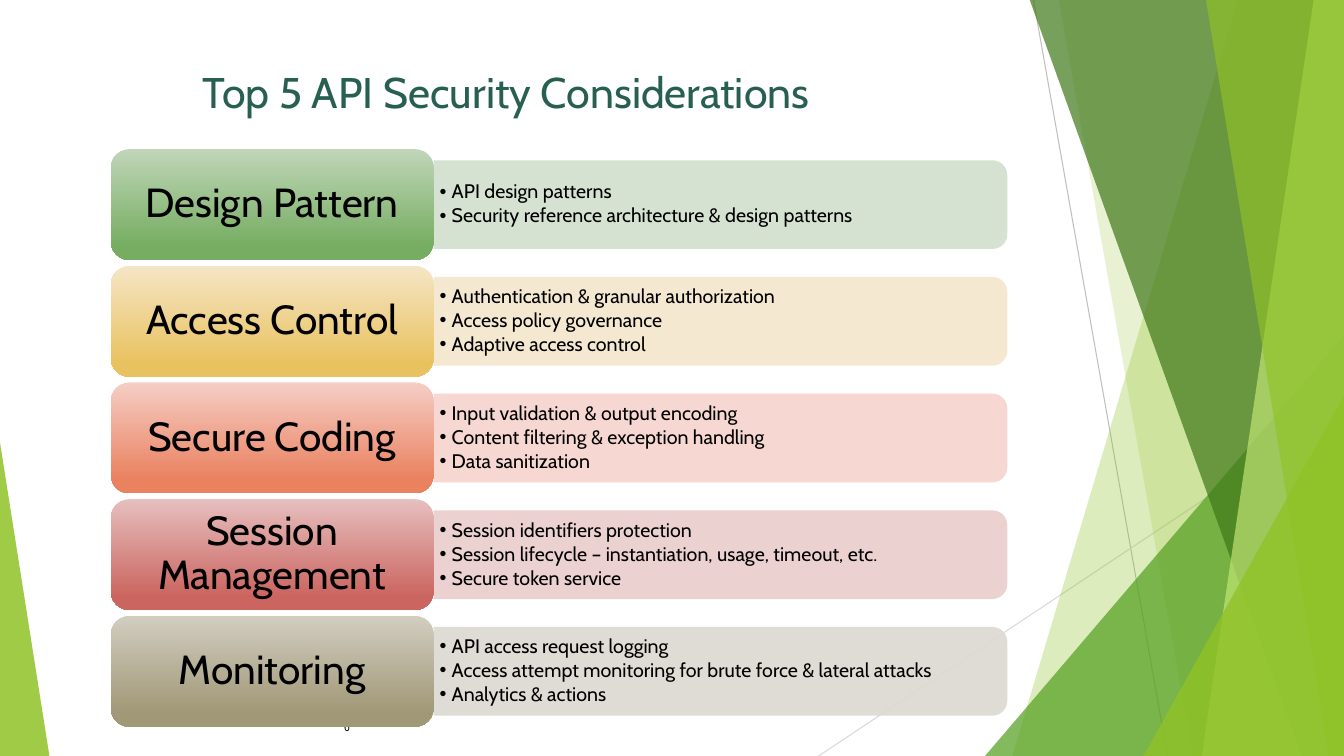
from dataclasses import dataclass

from lxml.etree import SubElement
from pptx import Presentation
from pptx.dml.color import RGBColor
from pptx.enum.shapes import MSO_CONNECTOR as Connector, MSO_SHAPE as Preset
from pptx.enum.text import MSO_ANCHOR as Anchor, MSO_AUTO_SIZE as AutoSize, PP_ALIGN as Align
from pptx.oxml.ns import qn
from pptx.util import Inches, Pt


@dataclass(frozen=True)
class Theme:
    font: str = "Cabin"
    number_font: str = "Arial Narrow"
    text: str = "000000"
    title: str = "275F50"
    lime: str = "90C226"
    green: str = "54A021"
    forest: str = "3F7819"
    pale_lime: str = "C0E474"
    title_size: float = 30.6
    label_size: float = 29
    list_size: float = 14
    number_size: float = 9


@dataclass(frozen=True)
class Ray:
    start: tuple[float, float]
    end: tuple[float, float]
    color: str


@dataclass(frozen=True)
class Band:
    """A strip reaching the right page edge, with a slanted left side."""
    top_left: float
    bottom_left: float
    color: str
    alpha: int


@dataclass(frozen=True)
class Corner:
    left: float
    top: float
    width: float
    apex: float
    color: str
    alpha: int


@dataclass(frozen=True)
class Topic:
    label: str
    points: tuple[str, ...]
    panel: str
    light: str
    dark: str


THEME = Theme()
PAGE_WIDTH, PAGE_HEIGHT = 13.33, 7.5
BAND_TOP = -0.01

LABEL_LEFT, LABEL_WIDTH, LABEL_HEIGHT = 1.1, 3.2, 1.1
PANEL_LEFT, PANEL_WIDTH, PANEL_HEIGHT = LABEL_LEFT + LABEL_WIDTH, 5.69, 0.88
LIST_WIDTH, LIST_HEIGHT = 5.65, 0.79
FIRST_ROW, LAST_ROW = 1.48, 6.11

RAYS = (
    Ray((10.25, 0), (11.58, 7.5), "BFBFBF"),
    Ray((13.33, 4.03), (8.12, 7.5), "D9D9D9"),
)
DECORATION = (
    Band(12.28, 10.04, THEME.lime, 30),
    Band(10.5, 11.83, THEME.lime, 20),
    Corner(9.77, 3.33, 3.56, 1, THEME.green, 72),
    Band(10.21, 12.91, THEME.forest, 70),
    Band(13.03, 11.92, THEME.pale_lime, 70),
    Band(11.96, 13.18, THEME.lime, 65),
    Corner(11.34, 3.93, 1.99, 1, THEME.lime, 80),
    Corner(0, 4.39, 0.49, 0, THEME.lime, 85),
)
TOPICS = (
    Topic("Design Pattern",
          ("API design patterns", "Security reference architecture & design patterns"),
          "D1DFCD", "C0D6B9", "76AD61"),
    Topic("Access Control",
          ("Authentication & granular authorization", "Access policy governance",
           "Adaptive access control"),
          "F5E6CD", "F5E5C5", "E9C260"),
    Topic("Secure Coding",
          ("Input validation & output encoding", "Content filtering & exception handling",
           "Data sanitization"),
          "F6D3CC", "F5CEC5", "EA815F"),
    Topic("Session Management",
          ("Session identifiers protection",
           "Session lifecycle – instantiation, usage, timeout, etc.", "Secure token service"),
          "EACDCD", "E6BFBE", "CB6560"),
    Topic("Monitoring",
          ("API access request logging",
           "Access attempt monitoring for brute force & lateral attacks", "Analytics & actions"),
          "DCD9D1", "D1CDC0", "A19877"),
)


def inches(*lengths: float) -> list[int]:
    return [Inches(length) for length in lengths]


def paint(shape, color: str, alpha: int) -> None:
    """Give a flat, translucent fill without line or shadow."""
    shape.shadow.inherit = False
    shape.line.fill.background()
    shape.fill.solid()
    shape.fill.fore_color.rgb = RGBColor.from_string(color)
    for tint in shape.fill._xPr.find(qn("a:solidFill")):
        SubElement(tint, qn("a:alpha"), val=str(alpha * 1000))


def write(frame, *lines: str, size: float, font: str = THEME.font, color: str = THEME.text,
          align=Align.LEFT, anchor=Anchor.MIDDLE, margins=(0.1, 0.05),
          line_spacing: float = 1, space_after: float = 0, bullet: bool = False) -> None:
    frame.word_wrap = True
    frame.auto_size = AutoSize.NONE
    frame.vertical_anchor = anchor
    frame.margin_left = frame.margin_right = Inches(margins[0])
    frame.margin_top = frame.margin_bottom = Inches(margins[1])
    for index, line in enumerate(lines):
        para = frame.add_paragraph() if index else frame.paragraphs[0]
        para.alignment = align
        para.line_spacing = line_spacing
        para.space_after = Pt(space_after)
        span = para.add_run()
        span.text = line
        span.font.name = font
        span.font.size = Pt(size)
        span.font.color.rgb = RGBColor.from_string(color)
        if bullet:
            props = para._p.get_or_add_pPr()
            props.set("marL", str(Inches(0.12)))
            props.set("indent", str(-Inches(0.12)))
            SubElement(props, qn("a:buFont"), typeface="Arial")
            SubElement(props, qn("a:buChar"), char="•")


def draw_ray(page, ray: Ray) -> None:
    line = page.shapes.add_connector(Connector.STRAIGHT, *inches(*ray.start, *ray.end))
    line.line.color.rgb = RGBColor.from_string(ray.color)
    line.line.width = Pt(0.75)
    SubElement(line._element.spPr, qn("a:effectLst"))


def draw_band(page, band: Band) -> None:
    builder = page.shapes.build_freeform(*inches(band.top_left, BAND_TOP))
    corners = ((PAGE_WIDTH, BAND_TOP), (PAGE_WIDTH, PAGE_HEIGHT), (band.bottom_left, PAGE_HEIGHT))
    builder.add_line_segments([inches(*corner) for corner in corners], close=True)
    paint(builder.convert_to_shape(), band.color, band.alpha)


def draw_corner(page, corner: Corner) -> None:
    box = inches(corner.left, corner.top, corner.width, PAGE_HEIGHT - corner.top)
    triangle = page.shapes.add_shape(Preset.ISOSCELES_TRIANGLE, *box)
    triangle.adjustments[0] = corner.apex
    paint(triangle, corner.color, corner.alpha)


def draw_topic(page, topic: Topic, top: float) -> None:
    middle = top + LABEL_HEIGHT / 2
    # The panel stands upright before its quarter turn.
    panel = page.shapes.add_shape(Preset.ROUND_2_SAME_RECTANGLE, *inches(
        PANEL_LEFT + (PANEL_WIDTH - PANEL_HEIGHT) / 2, middle - PANEL_WIDTH / 2,
        PANEL_HEIGHT, PANEL_WIDTH))
    panel.rotation = 90
    paint(panel, topic.panel, 90)

    points = page.shapes.add_textbox(*inches(
        PANEL_LEFT, middle - LIST_HEIGHT / 2, LIST_WIDTH, LIST_HEIGHT))
    write(points.text_frame, *topic.points, size=THEME.list_size, margins=(0.06, 0.03),
          line_spacing=0.9, space_after=2, bullet=True)

    label = page.shapes.add_shape(Preset.ROUNDED_RECTANGLE, *inches(
        LABEL_LEFT, top, LABEL_WIDTH, LABEL_HEIGHT))
    label.shadow.inherit = False
    label.line.fill.background()
    label.fill.gradient()
    label.fill.gradient_angle = 270
    for stop, color, position in zip(label.fill.gradient_stops, (topic.light, topic.dark), (0, 0.88)):
        stop.color.rgb = RGBColor.from_string(color)
        stop.position = position
    write(label.text_frame, topic.label, size=THEME.label_size, align=Align.CENTER,
          margins=(0.17, 0.12), line_spacing=0.9)


def main() -> None:
    deck = Presentation()
    deck.slide_width, deck.slide_height = inches(PAGE_WIDTH, PAGE_HEIGHT)
    page = deck.slides.add_slide(deck.slide_layouts[5])

    for ray in RAYS:
        draw_ray(page, ray)
    for item in DECORATION:
        (draw_band if isinstance(item, Band) else draw_corner)(page, item)

    title = page.shapes.title
    title.left, title.top, title.width, title.height = inches(1.91, 0.6, 9, 0.62)
    write(title.text_frame, "Top 5 API Security Considerations",
          size=THEME.title_size, color=THEME.title)
    number = page.shapes.add_textbox(*inches(2.17, 7.08, 1.4, 0.25))
    write(number.text_frame, "6", size=THEME.number_size, font=THEME.number_font, align=Align.RIGHT)

    pitch = (LAST_ROW - FIRST_ROW) / (len(TOPICS) - 1)
    for index, topic in enumerate(TOPICS):
        draw_topic(page, topic, FIRST_ROW + index * pitch)
    deck.save("out.pptx")


if __name__ == "__main__":
    main()
